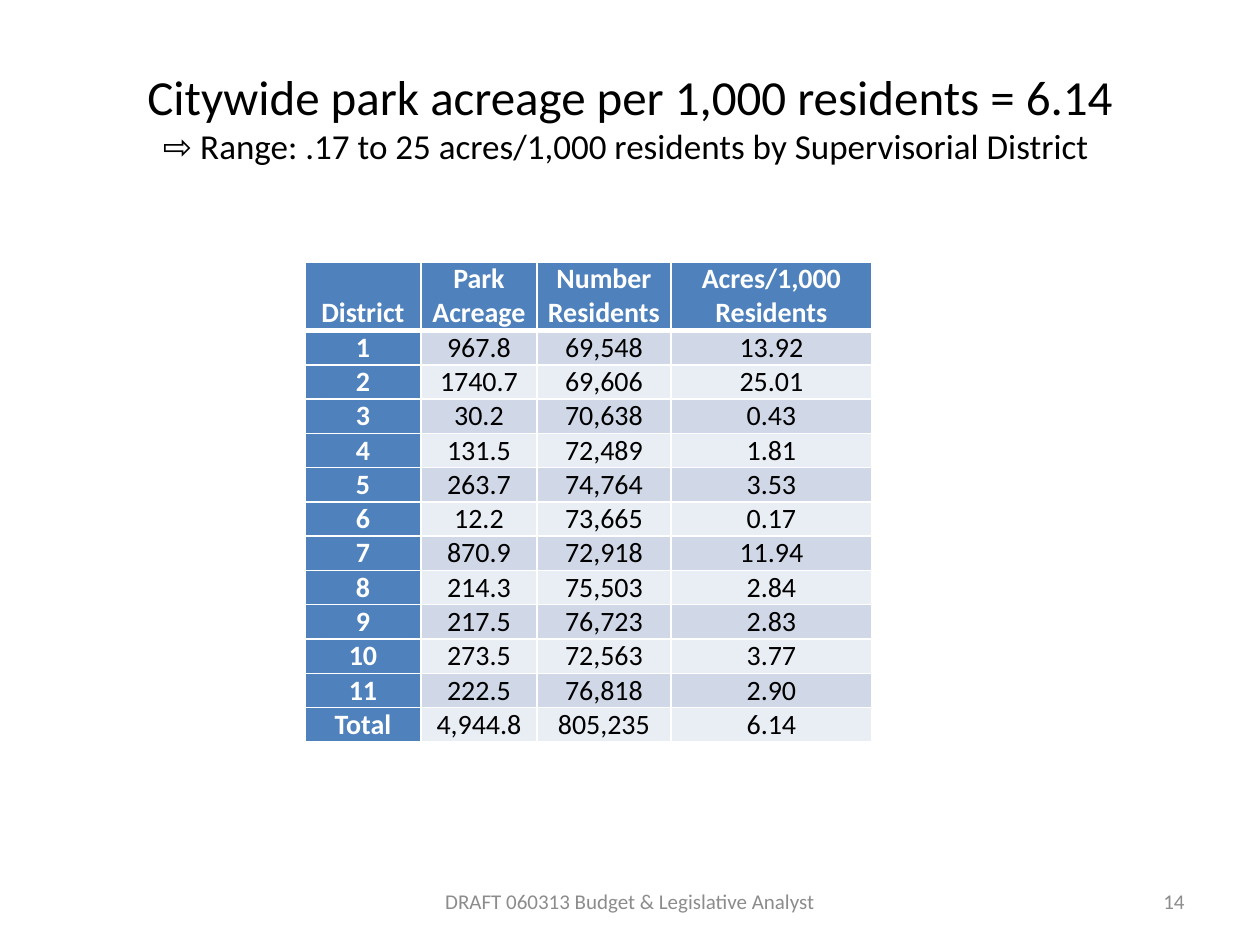
from dataclasses import dataclass

from lxml import etree
from pptx import Presentation
from pptx.dml.color import RGBColor
from pptx.enum.text import MSO_ANCHOR, MSO_AUTO_SIZE, PP_ALIGN
from pptx.oxml.ns import qn
from pptx.util import Emu, Pt

CENTER, RIGHT = PP_ALIGN.CENTER, PP_ALIGN.RIGHT
MIDDLE, BOTTOM = MSO_ANCHOR.MIDDLE, MSO_ANCHOR.BOTTOM
NO_AUTOFIT = MSO_AUTO_SIZE.NONE
PX_PER_INCH = 126


@dataclass(frozen=True)
class Theme:
    """Hold the colours and type sizes of the slide."""

    font: str = "Calibri"
    ink: str = "000000"
    white: str = "FFFFFF"
    muted: str = "8C8C8C"
    heading: str = "4F81BD"
    bands: tuple = ("D0D8E8", "E9EDF4")
    title_size: int = 28
    range_size: int = 20
    table_size: int = 16
    footer_size: int = 12
    rule: int = 1
    heading_rule: int = 3


THEME = Theme()

TITLE = "Citywide park acreage per 1,000 residents = 6.14"
RANGE = "⇨ Range: .17 to 25 acres/1,000 residents by Supervisorial District "
COLUMN_WIDTHS = (116, 116, 134, 201)
HEADINGS = ("District", "Park Acreage", "Number Residents", "Acres/1,000 Residents")
DISTRICTS = (
    ("1", "967.8", "69,548", "13.92"),
    ("2", "1740.7", "69,606", "25.01"),
    ("3", "30.2", "70,638", "0.43"),
    ("4", "131.5", "72,489", "1.81"),
    ("5", "263.7", "74,764", "3.53"),
    ("6", "12.2", "73,665", "0.17"),
    ("7", "870.9", "72,918", "11.94"),
    ("8", "214.3", "75,503", "2.84"),
    ("9", "217.5", "76,723", "2.83"),
    ("10", "273.5", "72,563", "3.77"),
    ("11", "222.5", "76,818", "2.90"),
    ("Total", "4,944.8", "805,235", "6.14"),
)


def px(length):
    """Turn a length in px into EMU."""
    return Emu(round(length * 914400 / PX_PER_INCH))


def style_run(run, size, color, bold=False):
    """Set the font of one run."""
    run.font.name = THEME.font
    run.font.size = Pt(size)
    run.font.bold = bold
    run.font.color.rgb = RGBColor.from_string(color)


def rule_cell(cell, top, bottom):
    """Draw white borders round a cell, with the given top and bottom widths."""
    properties = cell._tc.get_or_add_tcPr()
    widths = {"a:lnL": THEME.rule, "a:lnR": THEME.rule, "a:lnT": top, "a:lnB": bottom}
    for position, (tag, width) in enumerate(widths.items()):
        border = etree.Element(qn(tag), w=str(Pt(width)))
        fill = etree.SubElement(border, qn("a:solidFill"))
        etree.SubElement(fill, qn("a:srgbClr"), val=THEME.white)
        properties.insert(position, border)


def add_title(slide, left, top, width, height):
    """Fill the title placeholder with the average and its range."""
    title = slide.shapes.title
    title.left, title.top, title.width, title.height = map(px, (left, top, width, height))
    frame = title.text_frame
    frame.text = f"{TITLE}\v{RANGE}"
    frame.word_wrap = True
    frame.auto_size = NO_AUTOFIT
    frame.vertical_anchor = MIDDLE
    paragraph = frame.paragraphs[0]
    paragraph.alignment = CENTER
    for run, size in zip(paragraph.runs, (THEME.title_size, THEME.range_size)):
        style_run(run, size, THEME.ink)


def fill_cell(cell, text, row, column):
    """Write and format one cell according to its row and column."""
    is_heading = row == 0 or column == 0
    is_total = row == len(DISTRICTS)
    cell.text = text
    cell.margin_left = cell.margin_right = px(9)
    cell.margin_top = cell.margin_bottom = 0
    is_middle = (row > 0 and column == 2) or (is_total and column < 3)
    cell.vertical_anchor = MIDDLE if is_middle else BOTTOM
    paragraph = cell.text_frame.paragraphs[0]
    paragraph.alignment = CENTER
    style_run(paragraph.runs[0], THEME.table_size,
              THEME.white if is_heading else THEME.ink, is_heading)
    cell.fill.solid()
    background = THEME.heading if is_heading else THEME.bands[(row - 1) % 2]
    cell.fill.fore_color.rgb = RGBColor.from_string(background)
    rule_cell(cell,
              THEME.heading_rule if row == 1 else THEME.rule,
              THEME.heading_rule if row == 0 else THEME.rule)


def add_district_table(slide, left, top, row_height):
    """Add the acreage table, with a heading row of two lines."""
    records = (HEADINGS, *DISTRICTS)
    heights = [2 * row_height] + [row_height] * len(DISTRICTS)
    table = slide.shapes.add_table(
        len(records), len(HEADINGS), px(left), px(top),
        px(sum(COLUMN_WIDTHS)), px(sum(heights))).table
    table.first_col = True
    for column, width in zip(table.columns, COLUMN_WIDTHS):
        column.width = px(width)
    for row, (record, height) in enumerate(zip(records, heights)):
        table.rows[row].height = px(height)
        for column, text in enumerate(record):
            fill_cell(table.cell(row, column), text, row, column)


def add_footer(slide, text, alignment, left, top, width, height):
    """Add one footer text in its box."""
    frame = slide.shapes.add_textbox(*map(px, (left, top, width, height))).text_frame
    frame.text = text
    frame.word_wrap = True
    frame.vertical_anchor = MIDDLE
    paragraph = frame.paragraphs[0]
    paragraph.alignment = alignment
    style_run(paragraph.runs[0], THEME.footer_size, THEME.muted)


def main():
    """Build the slide and save it."""
    presentation = Presentation()
    presentation.slide_width, presentation.slide_height = px(1260), px(945)
    slide = presentation.slides.add_slide(presentation.slide_layouts.get_by_name("Title Only"))
    add_title(slide, 63, 38, 1134, 157)
    add_district_table(slide, 305, 262, 34)
    add_footer(slide, "DRAFT 060313 Budget & Legislative Analyst", CENTER, 430, 876, 400, 50)
    add_footer(slide, "14", RIGHT, 903, 876, 294, 50)
    presentation.save("out.pptx")


if __name__ == "__main__":
    main()
